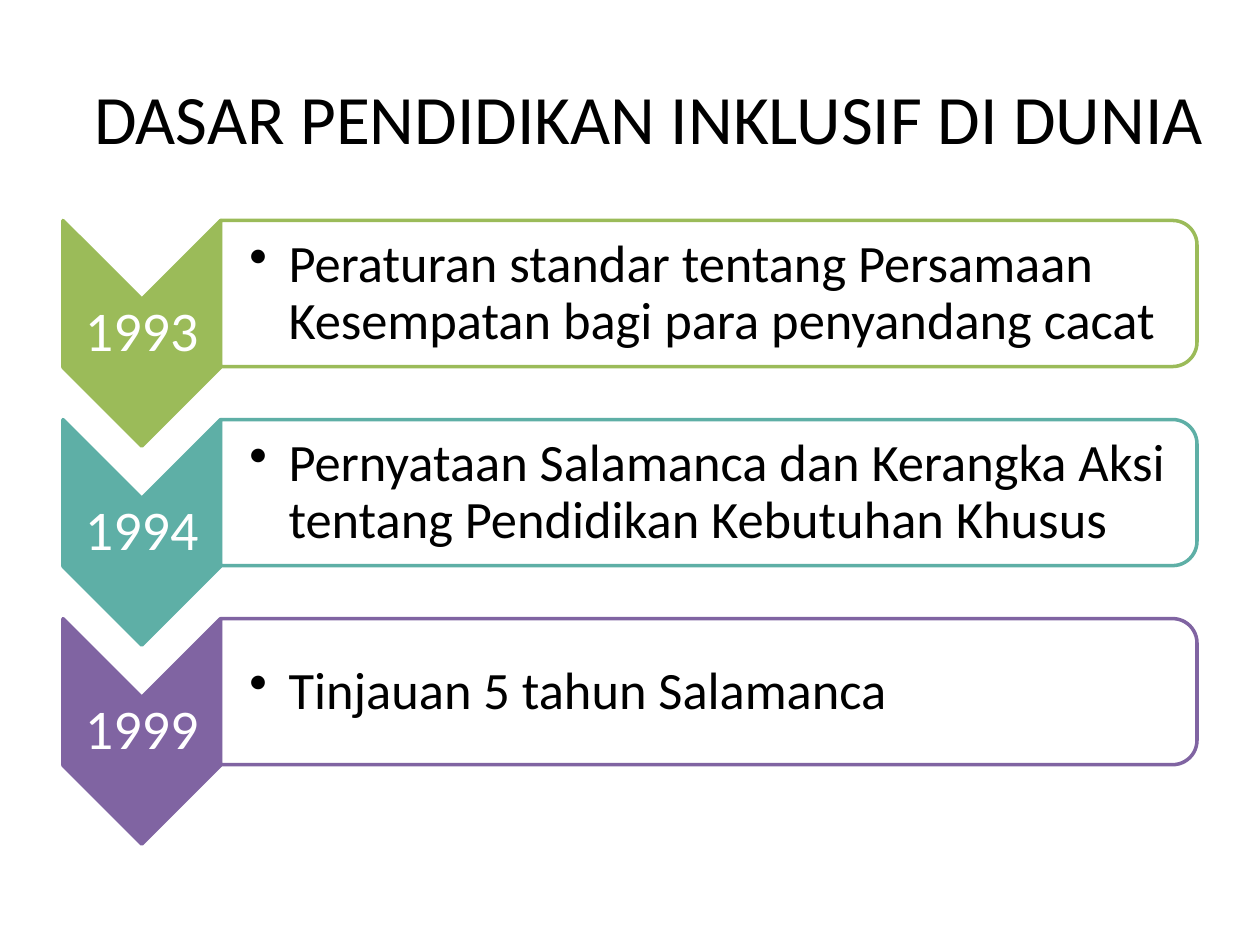
from lxml import etree
from pptx import Presentation
from pptx.dml.color import RGBColor
from pptx.enum.shapes import MSO_SHAPE
from pptx.enum.text import MSO_ANCHOR, PP_ALIGN
from pptx.oxml.ns import qn
from pptx.util import Inches, Pt

CHEVRON = MSO_SHAPE.CHEVRON
PANEL = MSO_SHAPE.ROUND_2_SAME_RECTANGLE
MIDDLE = MSO_ANCHOR.MIDDLE
CENTER, LEFT = PP_ALIGN.CENTER, PP_ALIGN.LEFT

FONT = "Calibri"
BLACK, WHITE = "000000", "FFFFFF"
TITLE = "DASAR PENDIDIKAN INKLUSIF DI DUNIA"
MILESTONES = [
    ("1993", "9BBB59", "Peraturan standar tentang Persamaan Kesempatan "
                       "bagi para penyandang cacat"),
    ("1994", "5EAFA6", "Pernyataan Salamanca dan Kerangka Aksi tentang "
                       "Pendidikan Kebutuhan Khusus"),
    ("1999", "8064A2", "Tinjauan 5 tahun Salamanca"),
]
ROW_PITCH = 1.58
YEAR_WIDTH = 1.25
CHEVRON_HEIGHT = 1.79
PANEL_HEIGHT = 1.16


def color(value):
    return RGBColor.from_string(value)


def add_span(para, text, size, ink):
    span = para.add_run()
    span.text = text
    span.font.name = FONT
    span.font.size = Pt(size)
    span.font.color.rgb = color(ink)


def add_turned_shape(shapes, kind, left, top, width, height, fill, line):
    """Add a shape turned by 90 degrees that covers the given box."""
    shape = shapes.add_shape(
        kind,
        Inches(left + (width - height) / 2), Inches(top + (height - width) / 2),
        Inches(height), Inches(width))
    shape.rotation = 90
    shape.shadow.inherit = False
    shape.fill.solid()
    shape.fill.fore_color.rgb = color(fill)
    shape.line.color.rgb = color(line)
    shape.line.width = Pt(2)
    return shape


def set_opacity(shape, percent):
    tone = shape.fill._xPr.find(qn("a:solidFill"))[0]
    etree.SubElement(tone, qn("a:alpha"), val=str(percent * 1000))


def add_label(shapes, left, top, width, height, text, size, ink, align, inset=0.02):
    box = shapes.add_textbox(Inches(left), Inches(top), Inches(width), Inches(height))
    frame = box.text_frame
    frame.word_wrap = True
    frame.vertical_anchor = MIDDLE
    frame.margin_left = Inches(inset)
    frame.margin_top = frame.margin_right = frame.margin_bottom = Inches(0.02)
    para = frame.paragraphs[0]
    para.alignment = align
    para.line_spacing = 0.9
    add_span(para, text, size, ink)
    return para


def add_bullet(para, indent):
    props = para._p.get_or_add_pPr()
    props.set("marL", str(Inches(indent)))
    props.set("indent", str(-Inches(indent)))
    etree.SubElement(props, qn("a:buChar"), char="•")


def add_title(page, left, top, width, height):
    title = page.shapes.title
    title.left, title.top = Inches(left), Inches(top)
    title.width, title.height = Inches(width), Inches(height)
    title.text_frame.vertical_anchor = MIDDLE
    para = title.text_frame.paragraphs[0]
    para.alignment = CENTER
    add_span(para, TITLE, 39.6, BLACK)


def add_milestone(shapes, left, top, width, year, accent, text):
    add_turned_shape(shapes, CHEVRON, left, top, YEAR_WIDTH, CHEVRON_HEIGHT,
                     accent, accent)
    year_height = CHEVRON_HEIGHT - YEAR_WIDTH
    add_label(shapes, left, top + YEAR_WIDTH / 2, YEAR_WIDTH, year_height,
              year, 32, WHITE, CENTER)

    panel_left = left + YEAR_WIDTH
    panel_width = width - YEAR_WIDTH
    panel = add_turned_shape(shapes, PANEL, panel_left, top, panel_width,
                             PANEL_HEIGHT, WHITE, accent)
    set_opacity(panel, 90)
    para = add_label(shapes, panel_left, top + 0.06, panel_width - 0.06,
                     PANEL_HEIGHT - 0.11, text, 30, BLACK, LEFT, inset=0.23)
    add_bullet(para, 0.31)


def add_timeline(page, left, top, width):
    group = page.shapes.add_group_shape()
    for row, milestone in enumerate(MILESTONES):
        add_milestone(group.shapes, left, top + row * ROW_PITCH, width, *milestone)


def main():
    deck = Presentation()
    deck.slide_width, deck.slide_height = Inches(10), Inches(7.5)
    page = deck.slides.add_slide(deck.slide_layouts[5])
    add_title(page, 0.5, 0.3, 9.3, 1.25)
    add_timeline(page, 0.5, 1.75, 9)
    deck.save("out.pptx")


if __name__ == "__main__":
    main()
